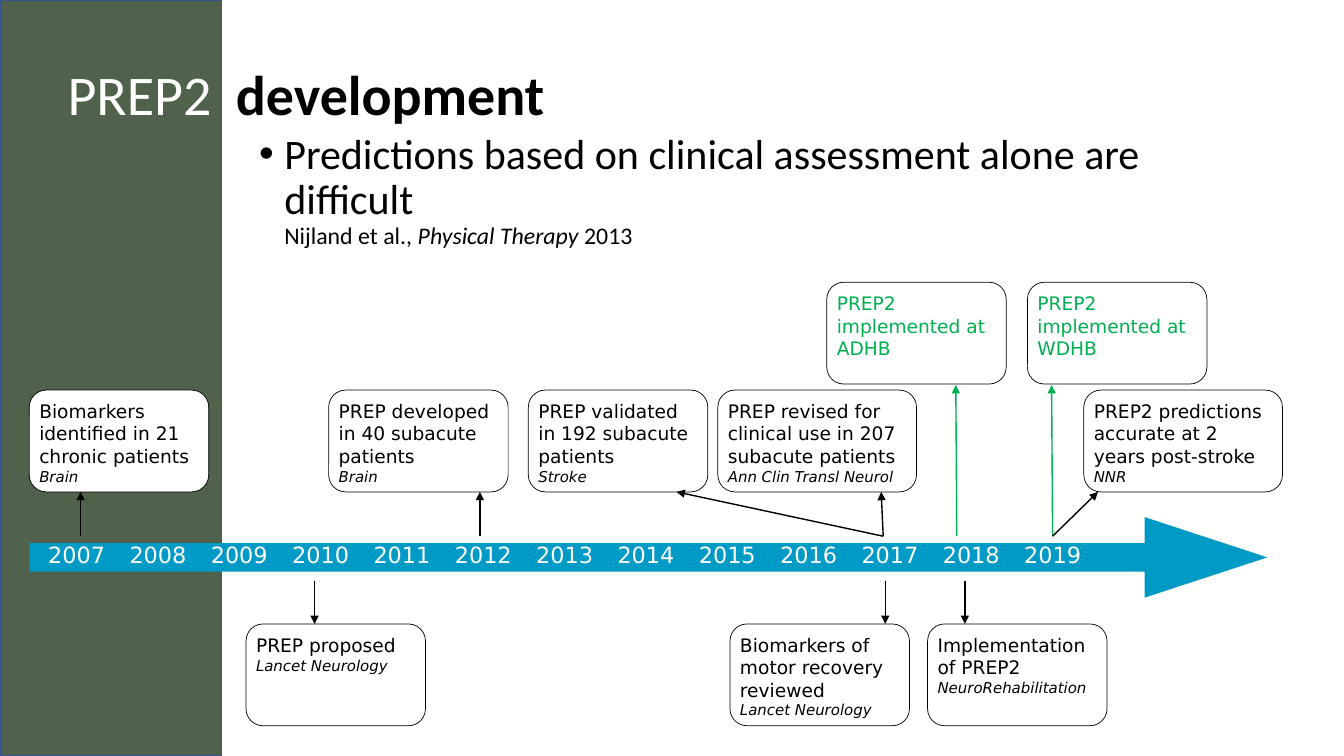
"""Build the PREP2 development timeline slide."""
from lxml import etree
from pptx import Presentation
from pptx.dml.color import RGBColor
from pptx.enum.shapes import MSO_CONNECTOR, MSO_SHAPE
from pptx.enum.text import MSO_ANCHOR, MSO_AUTO_SIZE, PP_ALIGN
from pptx.oxml.ns import qn
from pptx.util import Inches, Pt

RECTANGLE, ROUNDED = MSO_SHAPE.RECTANGLE, MSO_SHAPE.ROUNDED_RECTANGLE
RIGHT_ARROW, STRAIGHT = MSO_SHAPE.RIGHT_ARROW, MSO_CONNECTOR.STRAIGHT
TOP, MIDDLE, LEFT = MSO_ANCHOR.TOP, MSO_ANCHOR.MIDDLE, PP_ALIGN.LEFT
NO_AUTOFIT = MSO_AUTO_SIZE.NONE

COLORS = {"sidebar": "50614C", "sidebar_edge": "325491", "arrow": "009AC7",
          "black": "000000", "white": "FFFFFF", "green": "00B050"}
HEADING_FONT, TIMELINE_FONT = "Calibri", "DejaVu Sans"

TITLE = [("PREP2\t", "white", False), ("development", "black", True)]
FINDING = "Predictions based on clinical assessment alone are difficult"
CITATION = [("Nijland et al., ", False), ("Physical Therapy ", True), ("2013", False)]
YEARS = range(2007, 2020)

# fmt: off
ROWS = {"high": (2.8, 5.32, 3.82), "above": (3.87, 5.32, 4.88), "below": (6.19, 5.76, 6.19)}
MILESTONES = [
    ("Biomarkers identified in 21 chronic patients", "Brain", "above", 0.29, 1.78, 0.8, 0.8),
    ("PREP developed in 40 subacute patients", "Brain", "above", 3.26, 1.78, 4.76, 4.76),
    ("PREP revised for clinical use in 207 subacute patients", "Ann Clin Transl Neurol",
     "above", 7.12, 1.97, 8.76, 8.74),
    ("PREP validated in 192 subacute patients", "Stroke", "above", 5.24, 1.78, 8.76, 6.71),
    ("PREP2 implemented at ADHB", None, "high", 8.2, 1.78, 9.49, 9.48),
    ("PREP proposed", "Lancet Neurology", "below", 2.44, 1.78, 3.12, 3.12),
    ("Biomarkers of motor recovery reviewed", "Lancet Neurology", "below", 7.24, 1.78, 8.78, 8.78),
    ("Implementation of PREP2", "NeuroRehabilitation", "below", 9.2, 1.78, 9.57, 9.57),
    ("PREP2 implemented at WDHB", None, "high", 10.19, 1.78, 10.44, 10.43),
    ("PREP2 predictions accurate at 2 years post-stroke", "NNR",
     "above", 10.75, 1.97, 10.44, 10.89),
]
# fmt: on
SIDEBAR_WIDTH, BOX_HEIGHT = 2.2, 1.01
FIRST_YEAR_LEFT, LAST_YEAR_LEFT = 0.38, 10.06


def rgb(color):
    return RGBColor.from_string(COLORS[color])


def style(run, font, size, color, bold=False, italic=False):
    run.font.name, run.font.size = font, Pt(size)
    run.font.bold, run.font.italic = bold, italic
    run.font.color.rgb = rgb(color)


def place(shape, left, top, width, height):
    shape.left, shape.top = Inches(left), Inches(top)
    shape.width, shape.height = Inches(width), Inches(height)


def add_block(slide, preset, bounds, fill=None, edge=None, edge_width=1):
    block = slide.shapes.add_shape(preset, *map(Inches, bounds))
    block.shadow.inherit = False
    if fill:
        block.fill.solid()
        block.fill.fore_color.rgb = rgb(fill)
    else:
        block.fill.background()
    if edge:
        block.line.color.rgb = rgb(edge)
        block.line.width = Pt(edge_width)
    else:
        block.line.fill.background()
    return block


def fill_title(title):
    place(title, 0.44, 0.24, 12.79, 1.45)
    frame = title.text_frame
    frame.auto_size, frame.vertical_anchor = NO_AUTOFIT, MIDDLE
    frame.margin_left = Inches(0.23)
    heading = frame.paragraphs[0]
    heading.alignment, heading.line_spacing = LEFT, 0.9
    tabs = etree.SubElement(heading._p.get_or_add_pPr(), qn("a:tabLst"))
    etree.SubElement(tabs, qn("a:tab"), pos=str(Inches(1.67)), algn="l")
    for words, color, bold in TITLE:
        run = heading.add_run()
        run.text = words
        style(run, HEADING_FONT, 40, color, bold)


def fill_body(body):
    place(body, 2.47, 1.27, 9.98, 1.64)
    frame = body.text_frame
    frame.auto_size, frame.vertical_anchor = NO_AUTOFIT, TOP
    point = frame.paragraphs[0]
    point.text = FINDING
    style(point.runs[0], HEADING_FONT, 30, "black")
    point.line_spacing, point.space_before = 0.9, Pt(0)
    properties = point._p.get_or_add_pPr()
    properties.set("marL", str(Inches(0.25)))
    properties.set("indent", str(Inches(-0.25)))
    etree.SubElement(properties, qn("a:buChar"), char="•")
    point.add_line_break()
    etree.SubElement(point._p.find(qn("a:br")), qn("a:rPr"), sz="3000")
    for words, italic in CITATION:
        run = point.add_run()
        run.text = words
        style(run, HEADING_FONT, 17, "black", italic=italic)


def add_year(slide, year, left):
    label = slide.shapes.add_textbox(Inches(left), Inches(5.32), Inches(1), Inches(0.37))
    label.text_frame.word_wrap = True
    label.text_frame.text = str(year)
    style(label.text_frame.paragraphs[0].runs[0], TIMELINE_FONT, 16, "white")


def add_milestone(slide, event, journal, row, left, width, start_x, end_x):
    top, start_y, end_y = ROWS[row]
    color = "black" if journal else "green"
    fill = "white" if left < SIDEBAR_WIDTH else None
    box = add_block(slide, ROUNDED, (left, top, width, BOX_HEIGHT), fill, "black", 0.5)
    frame = box.text_frame
    frame.word_wrap, frame.vertical_anchor = True, TOP
    frame.margin_left = frame.margin_right = Inches(0.05)
    frame.margin_top = frame.margin_bottom = Inches(0.05)
    frame.text = f"{event}\n{journal}" if journal else event
    for paragraph, size, italic in zip(frame.paragraphs, (13.3, 10.7), (False, True)):
        paragraph.alignment = LEFT
        style(paragraph.runs[0], TIMELINE_FONT, size, color, italic=italic)

    pointer = slide.shapes.add_connector(
        STRAIGHT, *map(Inches, (start_x, start_y, end_x, end_y)))
    pointer.line.color.rgb = rgb(color)
    pointer.line.width = Pt(1)
    etree.SubElement(pointer.line._get_or_add_ln(), qn("a:tailEnd"), type="triangle")
    etree.SubElement(pointer._element.spPr, qn("a:effectLst"))


def main():
    deck = Presentation()
    deck.slide_width, deck.slide_height = Inches(13.33), Inches(7.5)
    slide = deck.slides.add_slide(deck.slide_layouts[1])
    sidebar = add_block(slide, RECTANGLE, (0, 0, SIDEBAR_WIDTH, 7.5), "sidebar", "sidebar_edge")
    slide.shapes._spTree.insert(2, sidebar._element)
    fill_title(slide.shapes.title)
    fill_body(slide.placeholders[1])

    arrow = add_block(slide, RIGHT_ARROW, (0.29, 5.13, 12.28, 0.8), "arrow")
    arrow.adjustments[0], arrow.adjustments[1] = 0.352, 1.523
    year_step = (LAST_YEAR_LEFT - FIRST_YEAR_LEFT) / (len(YEARS) - 1)
    for position, year in enumerate(YEARS):
        add_year(slide, year, FIRST_YEAR_LEFT + position * year_step)
    for milestone in MILESTONES:
        add_milestone(slide, *milestone)
    deck.save("out.pptx")


if __name__ == "__main__":
    main()
